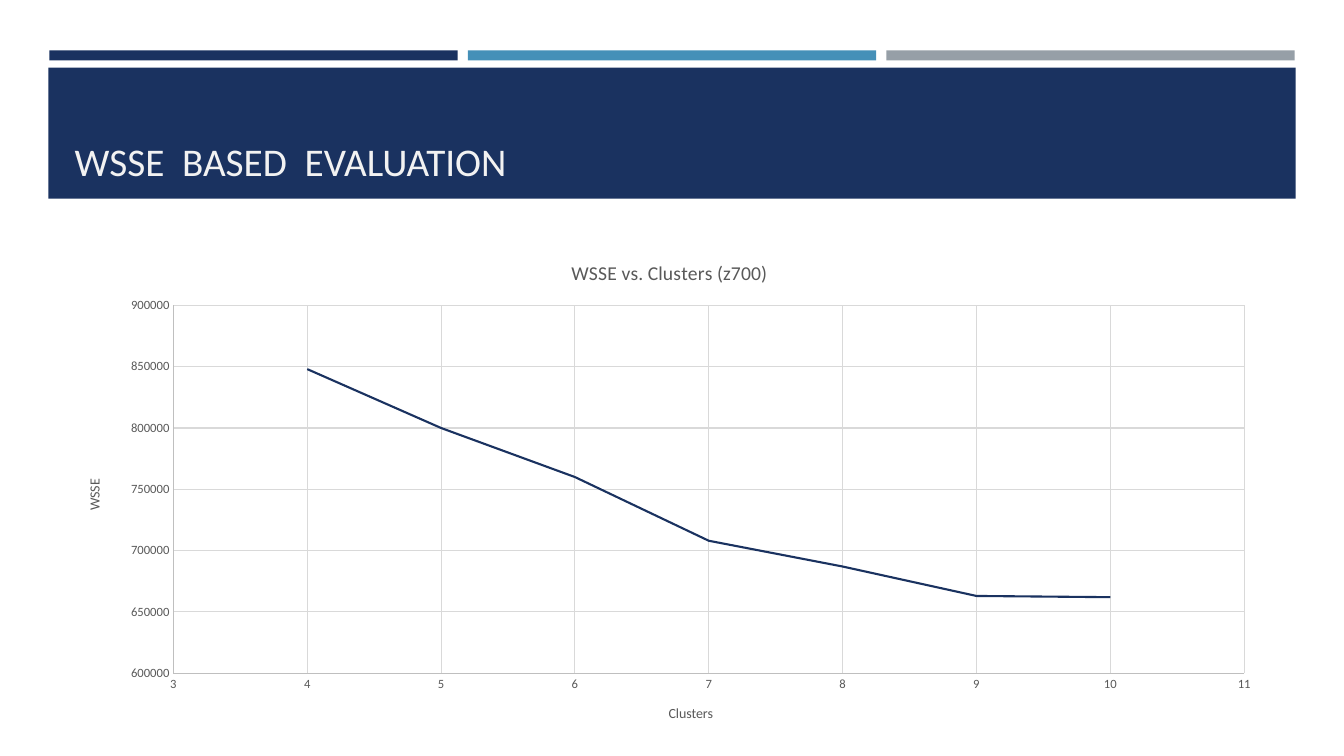
"""Build a slide with a scatter chart of WSSE against the number of clusters."""
from dataclasses import dataclass

from lxml.etree import SubElement
from pptx import Presentation
from pptx.chart.data import XyChartData
from pptx.dml.color import RGBColor
from pptx.enum.chart import XL_CHART_TYPE as ChartType, XL_TICK_MARK as Tick
from pptx.enum.shapes import MSO_SHAPE as Shape
from pptx.enum.text import MSO_ANCHOR as Anchor, MSO_AUTO_SIZE as AutoSize, PP_ALIGN as Align
from pptx.oxml.ns import qn
from pptx.util import Inches, Pt


@dataclass(frozen=True)
class Theme:
    font: str = "Calibri"
    navy: RGBColor = RGBColor(0x1A, 0x32, 0x60)
    blue: RGBColor = RGBColor(0x45, 0x90, 0xB8)
    gray: RGBColor = RGBColor(0x96, 0x9F, 0xA7)
    light: RGBColor = RGBColor(0xF2, 0xF2, 0xF2)
    label: RGBColor = RGBColor(0x59, 0x59, 0x59)
    axis: RGBColor = RGBColor(0xBF, 0xBF, 0xBF)
    grid: RGBColor = RGBColor(0xD9, 0xD9, 0xD9)
    title_size: Pt = Pt(28)
    chart_title_size: Pt = Pt(14)
    axis_title_size: Pt = Pt(10)
    tick_size: Pt = Pt(9)


theme = Theme()


def add_bar(slide, left, top, width, height, color):
    sp = slide.shapes.add_shape(
        Shape.RECTANGLE, Inches(left), Inches(top), Inches(width), Inches(height))
    sp.shadow.inherit = False
    sp.fill.solid()
    sp.fill.fore_color.rgb = color
    sp.line.fill.background()
    return sp


def write_run(tf, text, size, color):
    p = tf.paragraphs[0]
    r = p.add_run()
    r.text = text
    r.font.name = theme.font
    r.font.size = size
    r.font.bold = False
    r.font.color.rgb = color
    return p


prs = Presentation()
prs.slide_width, prs.slide_height = Inches(13.33), Inches(7.5)
slide = prs.slides.add_slide(prs.slide_layouts[5])

for i, color in enumerate((theme.navy, theme.blue, theme.gray)):
    add_bar(slide, 0.49 + i * 4.15, 0.5, 4.05, 0.1, color)
banner = add_bar(slide, 0.48, 0.67, 12.37, 1.3, theme.navy)

title = slide.shapes.title
title.left, title.top = Inches(0.64), Inches(0.77)
title.width, title.height = Inches(12.06), Inches(1.11)
banner.element.addnext(title.element)
tf = title.text_frame
tf.word_wrap = True
tf.auto_size = AutoSize.NONE
tf.vertical_anchor = Anchor.BOTTOM
p = write_run(tf, "WSSE  BASED  EVALUATION", theme.title_size, theme.light)
p.alignment = Align.LEFT

data = XyChartData()
wsse = data.add_series("Series 1")
for clusters, value in enumerate(
        (848000, 800000, 760000, 708000, 687000, 663000, 662000), start=4):
    wsse.add_data_point(clusters, value)

chart = slide.shapes.add_chart(
    ChartType.XY_SCATTER_SMOOTH_NO_MARKERS,
    Inches(0.64), Inches(2.38), Inches(12), Inches(5), data).chart
chart.has_legend = False
chart.font.name = theme.font
chart.font.size = theme.axis_title_size
chart.has_title = True
chart.chart_title.include_in_layout = False
write_run(chart.chart_title.text_frame, "WSSE vs. Clusters (z700)",
          theme.chart_title_size, theme.label)

line = chart.plots[0].series[0]
line.smooth = True
line.format.line.color.rgb = theme.navy
line.format.line.width = Pt(1.5)

for axis, name, low, high, step in (
        (chart.category_axis, "Clusters", 3, 11, 1),
        (chart.value_axis, "WSSE", 600000, 900000, 50000)):
    axis.minimum_scale, axis.maximum_scale, axis.major_unit = low, high, step
    axis.major_tick_mark = axis.minor_tick_mark = Tick.NONE
    axis.has_major_gridlines = True
    for stroke, color in ((axis.format.line, theme.axis),
                          (axis.major_gridlines.format.line, theme.grid)):
        stroke.color.rgb = color
        stroke.width = Pt(0.75)
    labels = axis.tick_labels
    labels.number_format, labels.number_format_is_linked = "General", False
    labels.font.name = theme.font
    labels.font.size = theme.tick_size
    labels.font.color.rgb = theme.label
    write_run(axis.axis_title.text_frame, name, theme.axis_title_size, theme.label)

body = chart.value_axis.axis_title.element.find(".//" + qn("a:bodyPr"))
body.set("rot", "-5400000")
body.set("vert", "horz")

plot_area = chart.element.find(".//" + qn("c:plotArea"))
layout = plot_area.find(qn("c:layout"))
if layout is None:
    layout = SubElement(plot_area, qn("c:layout"))
    plot_area.insert(0, layout)
manual = SubElement(layout, qn("c:manualLayout"))
for tag, val in (("layoutTarget", "inner"), ("xMode", "edge"), ("yMode", "edge"),
                 ("x", "0.09"), ("y", "0.13"), ("w", "0.885"), ("h", "0.73")):
    SubElement(manual, qn(f"c:{tag}")).set("val", val)

prs.save("out.pptx")
